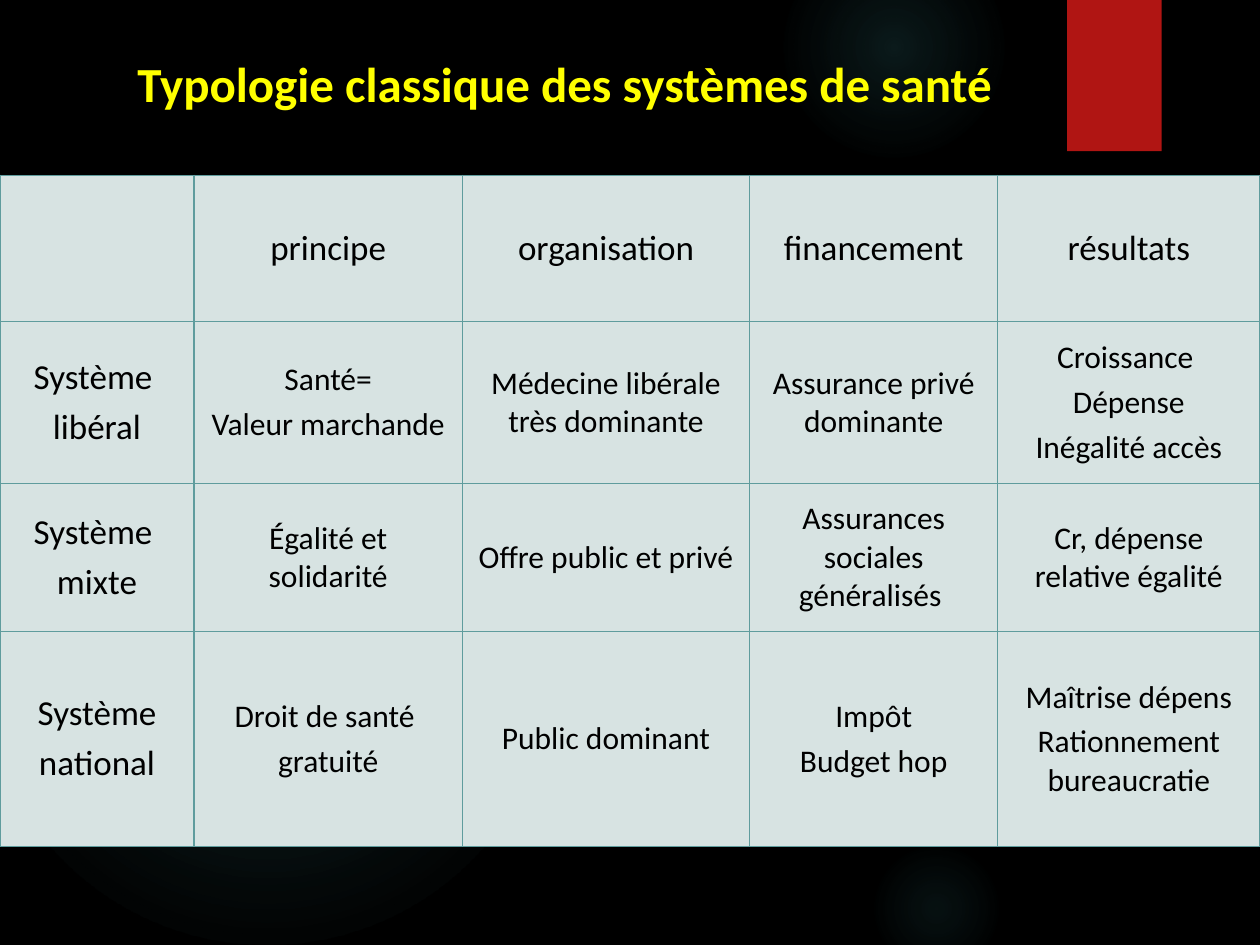
from lxml import etree
from pptx import Presentation
from pptx.dml.color import RGBColor
from pptx.enum.shapes import MSO_SHAPE
from pptx.enum.text import MSO_ANCHOR, PP_ALIGN
from pptx.oxml import parse_xml
from pptx.oxml.ns import nsdecls, qn
from pptx.util import Inches, Pt

OVAL, RECTANGLE = MSO_SHAPE.OVAL, MSO_SHAPE.RECTANGLE
MIDDLE, CENTER = MSO_ANCHOR.MIDDLE, PP_ALIGN.CENTER
WIDTH, HEIGHT = Inches(10), Inches(7.5)
FONT = "Calibri"
BLACK, YELLOW, RED = "000000", "FFFF00", "B01513"
GLOW, CELL, BORDER = "50B9C1", "D7E3E2", "5F9C9D"

# left, top, diameter, then position and opacity of the stops, all in percent
GLOWS = [
    (68.9, 24.4, 30.8, ((0, 7), (36, 6), (69, 0))),
    (62.2, -6.67, 17.5, ((0, 14), (36, 7), (73, 0))),
    (68.9, 88.93, 10.8, ((0, 9), (36, 5), (66, 0))),
    (-1.7, 38.93, 45.8, ((0, 11), (36, 10), (75, 0))),
    (-9.2, 42.27, 25.8, ((0, 8), (36, 8), (72, 0))),
]
COLUMNS = [15.4, 21.3, 22.8, 19.7, 20.8]
ROWS = [15.47, 17.2, 15.6, 22.8]
CONTENT = [
    ["", "principe", "organisation", "financement", "résultats"],
    ["Système \nlibéral", "Santé=\nValeur marchande",
     "Médecine libérale très dominante", "Assurance privé dominante",
     "Croissance \nDépense\nInégalité accès"],
    ["Système \nmixte", "Égalité et solidarité", "Offre public et privé",
     "Assurances sociales généralisés ", "Cr, dépense relative égalité"],
    ["Système\nnational", "Droit de santé \ngratuité", "Public dominant",
     "Impôt\nBudget hop", "Maîtrise dépens\nRationnement bureaucratie"],
]


def across(percent):
    return round(WIDTH * percent / 100)


def down(percent):
    return round(HEIGHT * percent / 100)


def color(value):
    return RGBColor.from_string(value)


def style_text(frame, size, value, bold=False):
    for index, para in enumerate(frame.paragraphs):
        para.alignment = CENTER
        para.space_before = Pt(size * 0.2 if index else 0)
        for span in para.runs:
            span.font.name = FONT
            span.font.size = Pt(size)
            span.font.bold = bold
            span.font.color.rgb = color(value)


def add_plain_shape(page, kind, left, top, width, height):
    shape = page.shapes.add_shape(kind, left, top, width, height)
    shape.shadow.inherit = False
    shape.line.fill.background()
    return shape


def add_glow(page, left, top, diameter, stops):
    size = across(diameter)
    shape = add_plain_shape(page, OVAL, across(left), down(top), size, size)
    marks = "".join(
        f'<a:gs pos="{position * 1000}"><a:srgbClr val="{GLOW}">'
        f'<a:alpha val="{opacity * 1000}"/></a:srgbClr></a:gs>'
        for position, opacity in stops
    )
    gradient = parse_xml(
        f'<a:gradFill {nsdecls("a")} rotWithShape="1"><a:gsLst>{marks}</a:gsLst>'
        '<a:path path="circle"><a:fillToRect l="50000" t="50000" r="50000" '
        'b="50000"/></a:path></a:gradFill>'
    )
    shape._element.spPr.find(qn("a:prstGeom")).addnext(gradient)


def add_ribbon(page):
    ribbon = add_plain_shape(page, RECTANGLE, across(84.7), 0, across(7.5), down(16))
    ribbon.fill.solid()
    ribbon.fill.fore_color.rgb = color(RED)


def place_title(page, text):
    title = page.shapes.title
    page.shapes._spTree.append(title._element)
    title.left, title.top = across(5), down(1.73)
    title.width, title.height = across(79.6), down(14)
    title.text_frame.text = text
    title.text_frame.vertical_anchor = MIDDLE
    style_text(title.text_frame, 28, YELLOW, bold=True)


def add_borders(cell):
    properties = cell._tc.get_or_add_tcPr()
    for side in ("a:lnL", "a:lnR", "a:lnT", "a:lnB"):
        line = etree.SubElement(properties, qn(side), w=str(Pt(0.75)))
        fill = etree.SubElement(line, qn("a:solidFill"))
        etree.SubElement(fill, qn("a:srgbClr"), val=BORDER)


def format_cell(cell, text, size):
    cell.text_frame.text = text
    cell.vertical_anchor = MIDDLE
    style_text(cell.text_frame, size, BLACK)
    add_borders(cell)
    cell.fill.solid()
    cell.fill.fore_color.rgb = color(CELL)


def add_system_table(page):
    table = page.shapes.add_table(
        len(ROWS), len(COLUMNS), 0, down(18.53), WIDTH, down(sum(ROWS))
    ).table
    table.first_row = table.horz_banding = False
    for column, share in zip(table.columns, COLUMNS):
        column.width = across(share)
    for row, share in zip(table.rows, ROWS):
        row.height = down(share)
    for row_index, texts in enumerate(CONTENT):
        for column_index, text in enumerate(texts):
            is_heading = row_index == 0 or column_index == 0
            format_cell(table.cell(row_index, column_index), text,
                        20 if is_heading else 18)


def main():
    deck = Presentation()
    deck.slide_width, deck.slide_height = WIDTH, HEIGHT
    page = deck.slides.add_slide(deck.slide_layouts[5])
    page.background.fill.solid()
    page.background.fill.fore_color.rgb = color(BLACK)
    for glow in GLOWS:
        add_glow(page, *glow)
    add_ribbon(page)
    place_title(page, "Typologie classique des systèmes de santé")
    add_system_table(page)
    deck.save("out.pptx")


if __name__ == "__main__":
    main()
